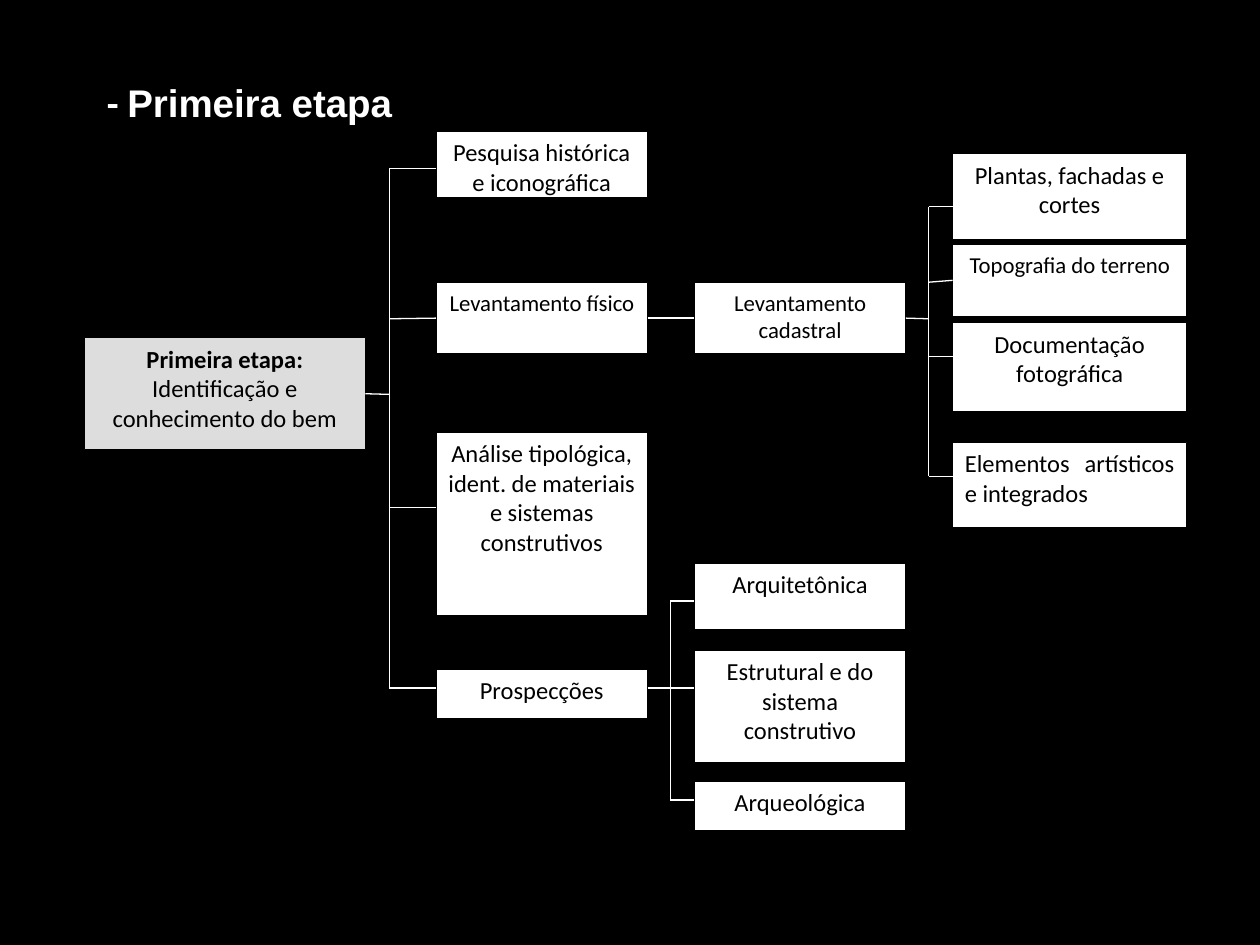
from dataclasses import dataclass

from lxml import etree
from pptx import Presentation
from pptx.dml.color import RGBColor
from pptx.enum import shapes, text
from pptx.oxml import ns
from pptx.util import Inches, Pt


@dataclass(frozen=True)
class Theme:
    black: RGBColor = RGBColor(0, 0, 0)
    white: RGBColor = RGBColor(255, 255, 255)
    gray: RGBColor = RGBColor(0xDD, 0xDD, 0xDD)
    body_font: str = "Calibri"
    title_font: str = "Arial"
    title_size: int = 22
    body_size: int = 14
    small_size: int = 13
    line_width: float = 0.75


THEME = Theme()
LEFT_SIDE, RIGHT_SIDE = 1, 3
COLUMN_2, COLUMN_3, COLUMN_4 = (3.46, 1.68), (5.51, 1.68), (7.56, 1.86)


def add_title(slide, dash, title):
    sp = slide.shapes.add_textbox(Inches(0.75), Inches(0.58), Inches(8.5), Inches(5.67))
    sp.text_frame.word_wrap = True
    p = sp.text_frame.paragraphs[0]
    pPr = p._p.get_or_add_pPr()
    pPr.set("marL", str(Inches(0.38)))
    pPr.set("indent", str(-Inches(0.38)))
    p.font.size = Pt(THEME.title_size)
    p.font.bold = True
    p.font.color.rgb = THEME.white
    for words, font in ((dash, THEME.body_font), (title, THEME.title_font)):
        r = p.add_run()
        r.text = words
        r.font.name = font


def add_box(slide, column, top, height, *lines, size=THEME.body_size,
            fill=THEME.white, align=text.PP_ALIGN.CENTER):
    left, width = column
    sp = slide.shapes.add_shape(shapes.MSO_SHAPE.RECTANGLE, Inches(left),
                                Inches(top), Inches(width), Inches(height))
    sp.shadow.inherit = False
    sp.fill.solid()
    sp.fill.fore_color.rgb = fill
    sp.line.color.rgb = THEME.black
    sp.line.width = Pt(THEME.line_width)
    tf = sp.text_frame
    tf.word_wrap = True
    tf.vertical_anchor = text.MSO_ANCHOR.TOP
    tf.text = "\n".join(lines)
    for p in tf.paragraphs:
        p.alignment = align
        p.font.name = THEME.body_font
        p.font.size = Pt(size)
        p.font.color.rgb = THEME.black
    return sp


def add_line(slide, x1, y1, x2, y2):
    line = slide.shapes.add_connector(shapes.MSO_CONNECTOR.STRAIGHT, x1, y1, x2, y2)
    line.line.color.rgb = THEME.white
    line.line.width = Pt(THEME.line_width)
    etree.SubElement(line._element.spPr, ns.qn("a:effectLst"))
    return line


def meets_middle(box, y):
    return abs(box.top + box.height // 2 - y) <= Inches(0.02)


def add_bracket(slide, parent, trunk, stem, branches):
    """Join a parent to its children through a vertical trunk."""
    x, stem_y = Inches(trunk), Inches(stem)
    line = add_line(slide, parent.left + parent.width, stem_y, x, stem_y)
    if meets_middle(parent, stem_y):
        line.begin_connect(parent, RIGHT_SIDE)
    heights = [y for _, y in branches]
    add_line(slide, x, Inches(min(heights)), x, Inches(max(heights)))
    for child, height in branches:
        y = Inches(height)
        line = add_line(slide, x, y, child.left, y)
        if meets_middle(child, y):
            line.end_connect(child, LEFT_SIDE)


def main():
    prs = Presentation()
    prs.slide_width, prs.slide_height = Inches(10), Inches(7.5)
    slide = prs.slides.add_slide(prs.slide_layouts[6])
    slide.background.fill.solid()
    slide.background.fill.fore_color.rgb = THEME.black

    add_title(slide, "- ", "Primeira etapa")

    stage = add_box(slide, (0.67, 2.23), 2.68, 0.89, "Primeira etapa:",
                    "Identificação e conhecimento do bem", fill=THEME.gray)
    stage.text_frame.paragraphs[0].font.bold = True

    research = add_box(slide, COLUMN_2, 1.04, 0.53, "Pesquisa histórica e iconográfica")
    survey = add_box(slide, COLUMN_2, 2.24, 0.57, "Levantamento físico",
                     size=THEME.small_size)
    analysis = add_box(slide, COLUMN_2, 3.43, 1.46,
                       "Análise tipológica, ident. de materiais e sistemas construtivos")
    probing = add_box(slide, COLUMN_2, 5.31, 0.39, "Prospecções")

    cadastral = add_box(slide, COLUMN_3, 2.24, 0.57, "Levantamento cadastral",
                        size=THEME.small_size)
    architectural = add_box(slide, COLUMN_3, 4.47, 0.53, "Arquitetônica")
    structural = add_box(slide, COLUMN_3, 5.16, 0.89,
                         "Estrutural e do sistema construtivo")
    archaeological = add_box(slide, COLUMN_3, 6.2, 0.39, "Arqueológica")

    plans = add_box(slide, COLUMN_4, 1.22, 0.68, "Plantas, fachadas e cortes")
    topography = add_box(slide, COLUMN_4, 1.94, 0.57, "Topografia do terreno",
                         size=THEME.small_size)
    photos = add_box(slide, COLUMN_4, 2.56, 0.71, "Documentação fotográfica")
    artistic = add_box(slide, COLUMN_4, 3.51, 0.68, "Elementos artísticos e integrados",
                       align=text.PP_ALIGN.JUSTIFY)

    add_bracket(slide, stage, 3.09, 3.13, [(research, 1.34), (survey, 2.53),
                                           (analysis, 4.03), (probing, 5.46)])
    add_bracket(slide, cadastral, 7.37, 2.53, [(plans, 1.64), (topography, 2.24),
                                               (photos, 2.83), (artistic, 3.78)])
    add_bracket(slide, probing, 5.32, 5.46, [(architectural, 4.77), (structural, 5.46),
                                             (archaeological, 6.35)])
    link = add_line(slide, 0, 0, 0, 0)
    link.begin_connect(survey, RIGHT_SIDE)
    link.end_connect(cadastral, LEFT_SIDE)

    prs.save("out.pptx")


if __name__ == "__main__":
    main()
